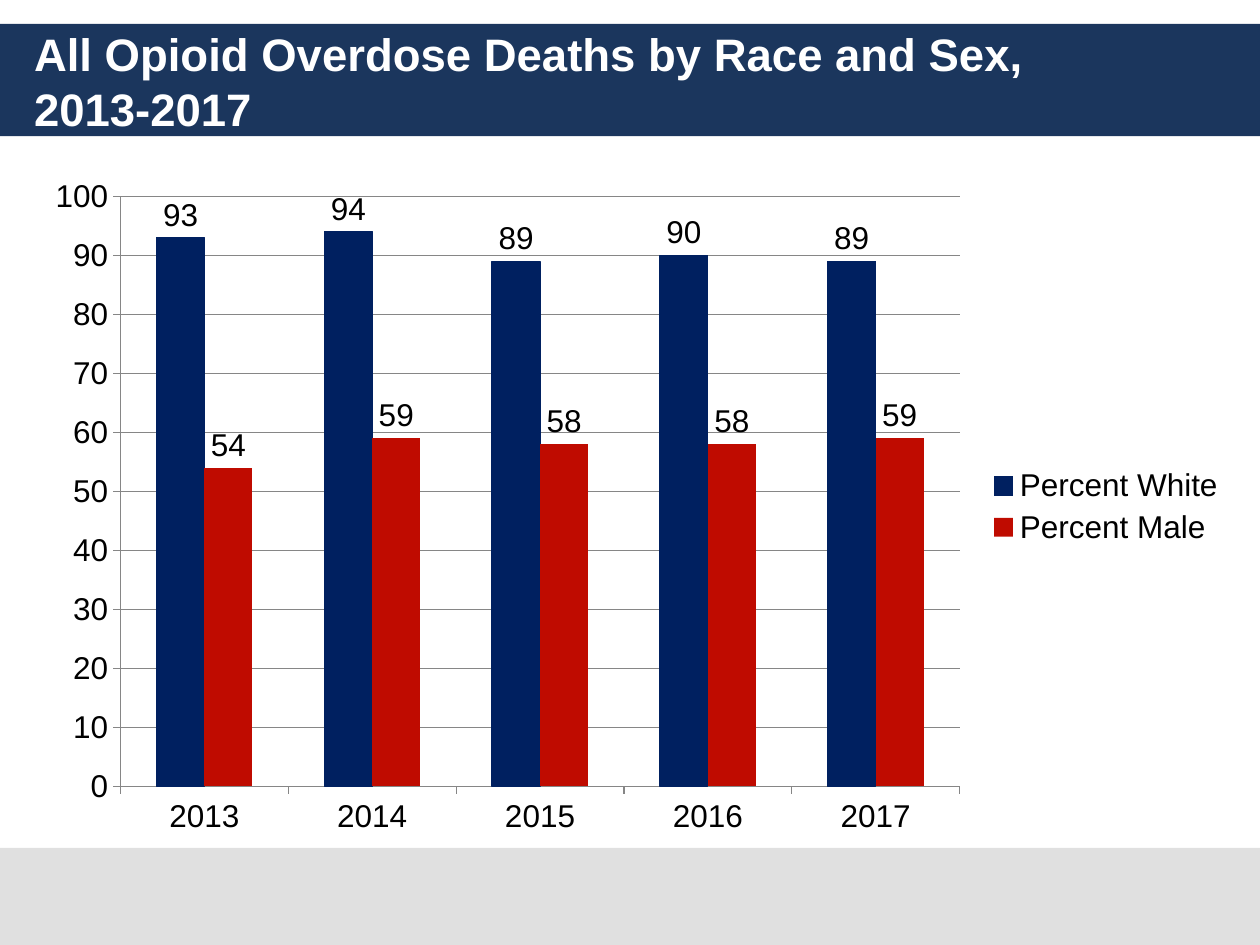
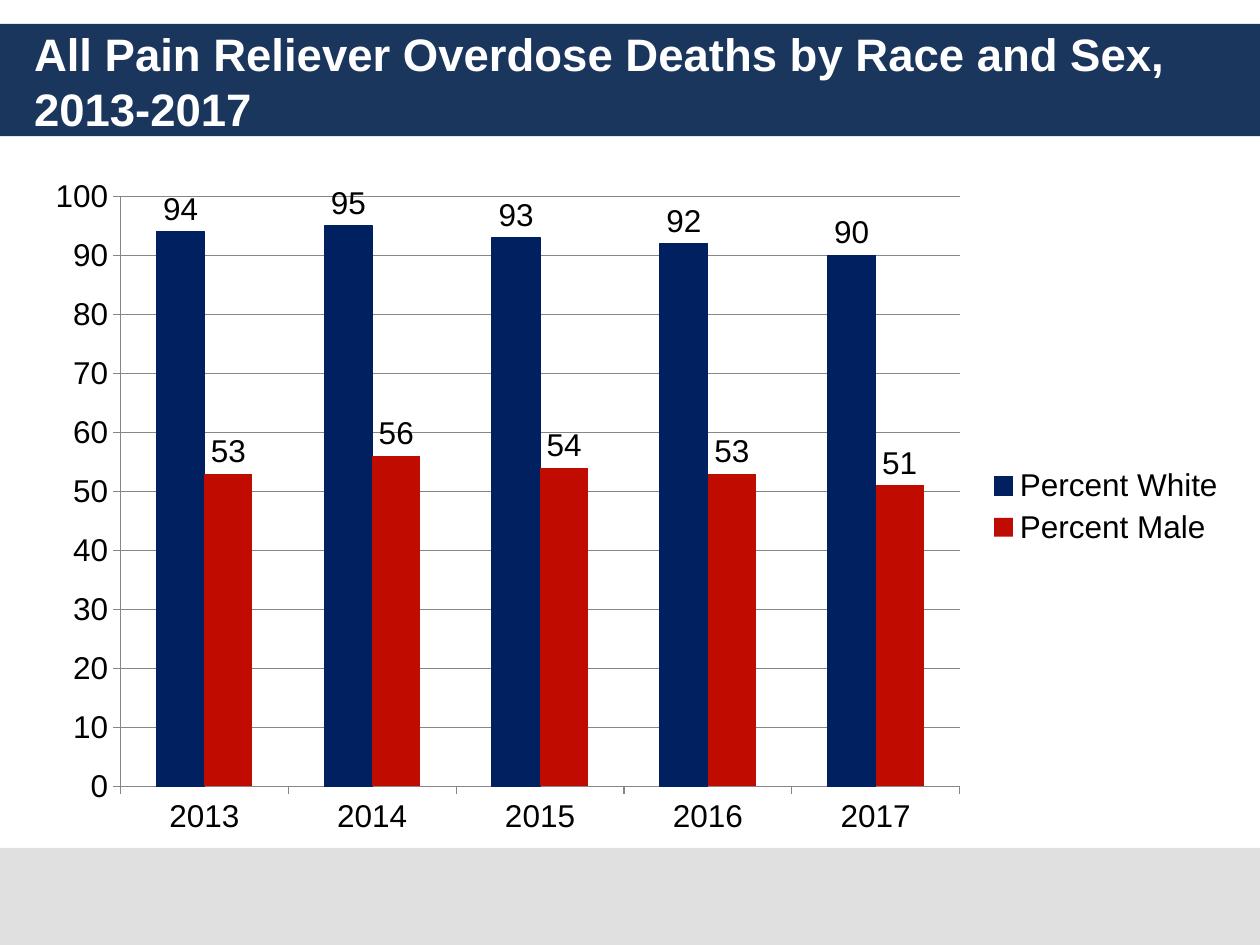
from pptx import Presentation
from pptx.chart.data import CategoryChartData
from pptx.dml.color import RGBColor
from pptx.enum.chart import XL_CHART_TYPE, XL_LABEL_POSITION, XL_LEGEND_POSITION, XL_TICK_MARK
from pptx.enum.shapes import MSO_SHAPE
from pptx.enum.text import MSO_ANCHOR, MSO_AUTO_SIZE, PP_ALIGN
from pptx.util import Inches, Pt

# Content
YEARS = ["2013", "2014", "2015", "2016", "2017"]
SLIDES = [
    {
        "title": "All Opioid Overdose Deaths by Race and Sex,\v2013-2017",
        "Percent White": [93, 94, 89, 90, 89],
        "Percent Male": [54, 59, 58, 58, 59],
    },
    {
        "title": "All Pain Reliever Overdose Deaths by Race and Sex, 2013-2017",
        "Percent White": [94, 95, 93, 92, 90],
        "Percent Male": [53, 56, 54, 53, 51],
    },
]

# Shared look: places are left, top, width, height in inches
SERIES_COLORS = {"Percent White": "002060", "Percent Male": "BF0B00"}
BANDS = [((0, 0.19, 10, 0.89), "1B365D"), ((0, 6.73, 10, 0.77), "E0E0E0")]
TITLE_PLACE = (0.17, 0.19, 9.67, 0.9)
CHART_PLACE = (0.25, 1.31, 9.58, 5.42)
TITLE_FONT = {"name": "Arial", "size": Pt(26), "bold": True}
CHART_FONT = {"name": "Arial", "size": Pt(18), "bold": False}
TITLE_FRAME = {"word_wrap": True, "auto_size": MSO_AUTO_SIZE.NONE,
               "vertical_anchor": MSO_ANCHOR.MIDDLE}
AXIS_GREY = "868686"


def color(hex_code):
    return RGBColor.from_string(hex_code)


def inches(place):
    return [Inches(length) for length in place]


def set_all(target, values):
    for name, value in values.items():
        setattr(target, name, value)


def set_font(font, values, hex_code):
    set_all(font, values)
    font.color.rgb = color(hex_code)


def set_line(line, hex_code):
    line.color.rgb = color(hex_code)
    line.width = Pt(0.75)


def add_layout_bands(page):
    """Draw the bands, then move them behind the title of the page's layout."""
    layout_title = page.slide_layout.placeholders[0]
    for place, hex_code in BANDS:
        band = page.shapes.add_shape(MSO_SHAPE.RECTANGLE, *inches(place))
        band.shadow.inherit = False
        band.fill.solid()
        band.fill.fore_color.rgb = color(hex_code)
        band.line.fill.background()
        layout_title.element.addprevious(band.element)


def add_title(page, text):
    title = page.shapes.title
    title.left, title.top, title.width, title.height = inches(TITLE_PLACE)
    frame = title.text_frame
    frame.text = text
    set_all(frame, TITLE_FRAME)
    para = frame.paragraphs[0]
    para.alignment = PP_ALIGN.LEFT
    for span in para.runs:
        set_font(span.font, TITLE_FONT, "FFFFFF")


def add_deaths_chart(page, content):
    data = CategoryChartData()
    data.categories = YEARS
    for name in SERIES_COLORS:
        data.add_series(name, content[name])
    chart = page.shapes.add_chart(
        XL_CHART_TYPE.COLUMN_CLUSTERED, *inches(CHART_PLACE), data).chart
    set_font(chart.font, CHART_FONT, "000000")
    chart.has_title = False
    chart.has_legend = True
    set_all(chart.legend, {"position": XL_LEGEND_POSITION.RIGHT,
                           "include_in_layout": False})

    # Axes
    for axis in (chart.category_axis, chart.value_axis):
        axis.major_tick_mark = XL_TICK_MARK.OUTSIDE
        set_line(axis.format.line, AXIS_GREY)
    set_all(chart.value_axis, {"minimum_scale": 0, "maximum_scale": 100,
                               "major_unit": 10, "has_major_gridlines": True})
    set_line(chart.value_axis.major_gridlines.format.line, AXIS_GREY)

    # Columns and their values
    plot = chart.plots[0]
    set_all(plot, {"gap_width": 150, "overlap": 0, "vary_by_categories": False})
    for series in plot.series:
        hex_code = SERIES_COLORS[series.name]
        series.format.fill.solid()
        series.format.fill.fore_color.rgb = color(hex_code)
        set_all(series.data_labels, {"show_value": True,
                                     "position": XL_LABEL_POSITION.OUTSIDE_END})
    set_line(plot.series[0].format.line, SERIES_COLORS["Percent White"])


def main():
    deck = Presentation()
    deck.slide_width, deck.slide_height = inches((10, 7.5))
    title_only = deck.slide_layouts[5]
    for content in SLIDES:
        page = deck.slides.add_slide(title_only)
        add_title(page, content["title"])
        add_deaths_chart(page, content)
    add_layout_bands(deck.slides[0])
    deck.save("out.pptx")


if __name__ == "__main__":
    main()
